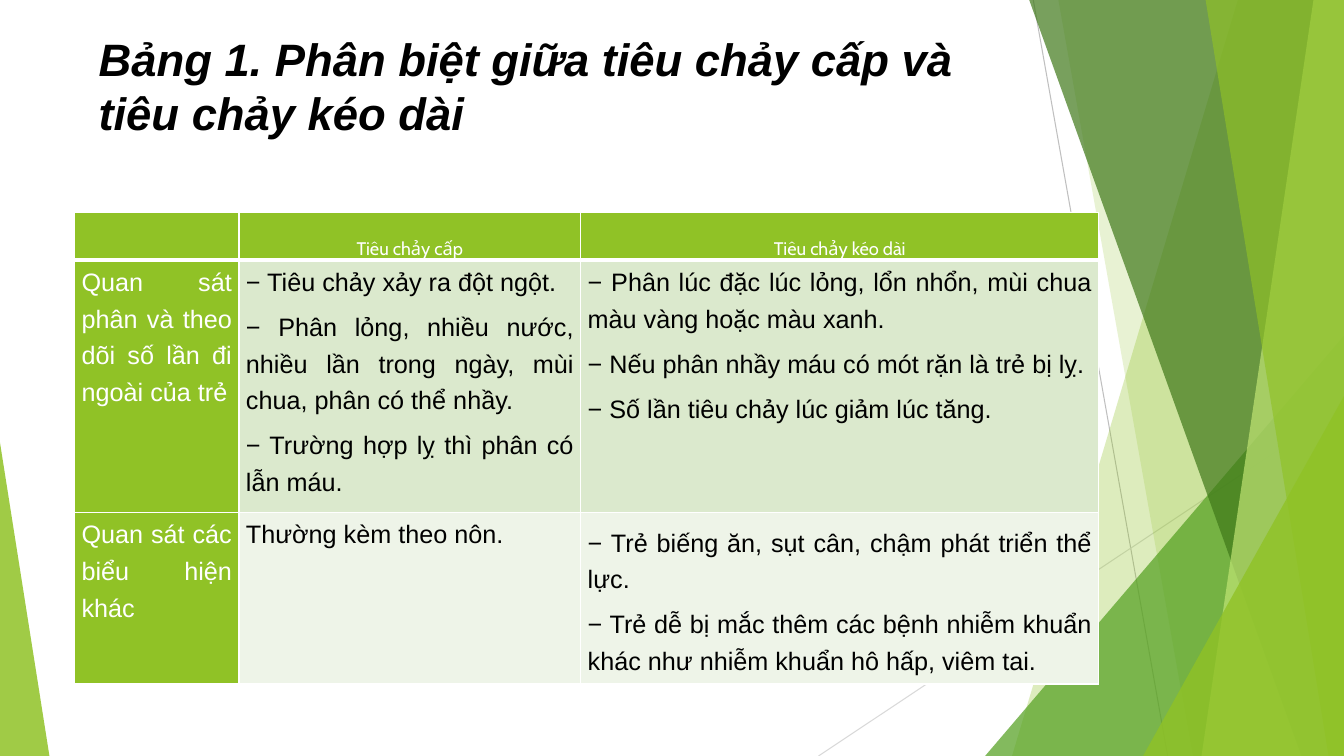
from dataclasses import dataclass

from lxml.etree import SubElement
from pptx import Presentation
from pptx.dml.color import RGBColor
from pptx.enum.shapes import MSO_CONNECTOR as Connector, MSO_SHAPE as Preset
from pptx.enum.text import MSO_ANCHOR as Anchor, PP_ALIGN as Align
from pptx.oxml.ns import qn
from pptx.util import Emu, Inches, Pt


@dataclass(frozen=True)
class Theme:
    green: str = "90C226"
    leaf: str = "54A021"
    forest: str = "3F7819"
    lime: str = "C0E474"
    band_dark: str = "DBE9CD"
    band_light: str = "EEF4E8"
    white: str = "FFFFFF"
    black: str = "000000"
    body_font: str = "Arial"
    header_font: str = "Cabin"
    title_size: float = 32.4
    header_size: float = 13
    body_size: float = 18


# All positions are in percent of the slide's width (x) and height (y).
@dataclass(frozen=True)
class Ray:
    start: tuple[float, float]
    end: tuple[float, float]
    color: str


@dataclass(frozen=True)
class Facet:
    """Panel with a slanted left edge, reaching the slide's right side."""
    top: float
    bottom: float
    color: str
    opacity: int


@dataclass(frozen=True)
class Corner:
    """Right triangle standing on the slide's bottom edge."""
    left: float
    top: float
    width: float
    apex: float
    color: str
    opacity: int


@dataclass(frozen=True)
class CellStyle:
    fill: str
    color: str
    font: str
    size: float
    align: Align
    anchor: Anchor = Anchor.TOP


THEME = Theme()
HEADER = CellStyle(THEME.green, THEME.white, THEME.header_font,
                   THEME.header_size, Align.CENTER, Anchor.BOTTOM)
LABEL = CellStyle(THEME.green, THEME.white, THEME.body_font,
                  THEME.body_size, Align.JUSTIFY)
DARK = CellStyle(THEME.band_dark, THEME.black, THEME.body_font,
                 THEME.body_size, Align.JUSTIFY)
LIGHT = CellStyle(THEME.band_light, THEME.black, THEME.body_font,
                  THEME.body_size, Align.JUSTIFY)
LIGHT_MIDDLE = CellStyle(THEME.band_light, THEME.black, THEME.body_font,
                         THEME.body_size, Align.JUSTIFY, Anchor.MIDDLE)

RAYS = [
    Ray((76.88, 0), (86.88, 100), "BFBFBF"),
    Ray((100, 53.73), (60.9, 100), "D9D9D9"),
]
DECORATIONS = [
    Facet(92.1, 75.3, THEME.green, 30),
    Facet(78.75, 88.75, THEME.green, 20),
    Corner(73.3, 44.4, 26.7, 1, THEME.leaf, 72),
    Facet(76.58, 96.83, THEME.forest, 70),
    Facet(97.73, 89.4, THEME.lime, 70),
    Facet(89.7, 98.85, THEME.green, 65),
    Corner(85.05, 52.4, 14.95, 1, THEME.green, 80),
    Corner(0, 58.53, 3.68, 0, THEME.green, 85),
]

TITLE = "Bảng 1. Phân biệt giữa tiêu chảy cấp và tiêu chảy kéo dài"
COLUMNS = [12.23, 25.43, 38.55]
ROWS = [6.27, 32.67, 22.67]
CELLS = [
    [(HEADER, []), (HEADER, ["Tiêu chảy cấp"]), (HEADER, ["Tiêu chảy kéo dài"])],
    [(LABEL, ["Quan sát phân và theo dõi số lần đi ngoài của trẻ"]),
     (DARK, ["− Tiêu chảy xảy ra đột ngột.",
             "− Phân lỏng, nhiều nước, nhiều lần trong ngày, mùi chua, phân có thể nhầy.",
             "− Trường hợp lỵ thì phân có lẫn máu."]),
     (DARK, ["− Phân lúc đặc lúc lỏng, lổn nhổn, mùi chua màu vàng hoặc màu xanh.",
             "− Nếu phân nhầy máu có mót rặn là trẻ bị lỵ.",
             "− Số lần tiêu chảy lúc giảm lúc tăng."])],
    [(LABEL, ["Quan sát các biểu hiện khác"]),
     (LIGHT, ["Thường kèm theo nôn."]),
     (LIGHT_MIDDLE, ["− Trẻ biếng ăn, sụt cân, chậm phát triển thể lực.",
                     "− Trẻ dễ bị mắc thêm các bệnh nhiễm khuẩn khác như nhiễm khuẩn hô hấp, viêm tai."])],
]

presentation = Presentation()
presentation.slide_width = Inches(13.33)
presentation.slide_height = Inches(7.5)


def x(percent: float) -> Emu:
    return Emu(round(presentation.slide_width * percent / 100))


def y(percent: float) -> Emu:
    return Emu(round(presentation.slide_height * percent / 100))


def rgb(color: str) -> RGBColor:
    return RGBColor.from_string(color)


def draw_ray(slide, ray: Ray) -> None:
    line = slide.shapes.add_connector(
        Connector.STRAIGHT, x(ray.start[0]), y(ray.start[1]), x(ray.end[0]), y(ray.end[1]))
    line.line.color.rgb = rgb(ray.color)
    line.line.width = Pt(0.75)
    SubElement(line._element.spPr, qn("a:effectLst"))


def draw_decoration(slide, item: Facet | Corner) -> None:
    if isinstance(item, Facet):
        builder = slide.shapes.build_freeform(x(item.top), y(0))
        builder.add_line_segments(
            [(x(100), y(0)), (x(100), y(100)), (x(item.bottom), y(100))], close=True)
        shape = builder.convert_to_shape()
    else:
        shape = slide.shapes.add_shape(
            Preset.ISOSCELES_TRIANGLE, x(item.left), y(item.top),
            x(item.width), y(100 - item.top))
        shape.adjustments[0] = item.apex
    shape.shadow.inherit = False
    shape.line.fill.background()
    shape.fill.solid()
    shape.fill.fore_color.rgb = rgb(item.color)
    for color in shape._element.spPr.iter(qn("a:srgbClr")):
        SubElement(color, qn("a:alpha"), val=str(item.opacity * 1000))


def draw_title(slide) -> None:
    frame = slide.shapes.add_textbox(x(6.6), y(3.47), x(70.5), y(19.2)).text_frame
    frame.word_wrap = True
    paragraph = frame.paragraphs[0]
    paragraph.text = TITLE
    font = paragraph.font
    font.name, font.size = THEME.body_font, Pt(THEME.title_size)
    font.bold = font.italic = True
    font.color.rgb = rgb(THEME.black)


def add_border(cell, side: str, points: float) -> None:
    line = SubElement(cell._tc.get_or_add_tcPr(), qn(f"a:ln{side}"), w=str(Pt(points)))
    SubElement(SubElement(line, qn("a:solidFill")), qn("a:srgbClr"), val=THEME.white)


def fill_cell(cell, style: CellStyle, lines: list[str], row: int) -> None:
    # Borders: a thicker rule separates the header from the body
    for side in "LRTB":
        under_header = (row, side) in ((0, "B"), (1, "T"))
        add_border(cell, side, 3 if under_header else 1)
    cell.fill.solid()
    cell.fill.fore_color.rgb = rgb(style.fill)
    cell.margin_left = cell.margin_right = Inches(0.07)
    cell.margin_top = cell.margin_bottom = 0
    cell.vertical_anchor = style.anchor
    cell.text_frame.text = "\n".join(lines)
    for paragraph in cell.text_frame.paragraphs:
        paragraph.alignment = style.align
        paragraph.line_spacing = 1.3
        paragraph.space_before = Pt(6)
        font = paragraph.font
        font.name, font.size, font.bold = style.font, Pt(style.size), False
        font.color.rgb = rgb(style.color)


def draw_table(slide) -> None:
    table = slide.shapes.add_table(
        len(ROWS), len(COLUMNS), x(5.55), y(28.13), x(sum(COLUMNS)), y(sum(ROWS))).table
    table.first_row = table.horz_banding = False
    for column, width in zip(table.columns, COLUMNS):
        column.width = x(width)
    for index, (row, height) in enumerate(zip(table.rows, ROWS)):
        row.height = y(height)
        for cell, (style, lines) in zip(row.cells, CELLS[index]):
            fill_cell(cell, style, lines, index)


def main() -> None:
    slide = presentation.slides.add_slide(presentation.slide_layouts[6])
    for ray in RAYS:
        draw_ray(slide, ray)
    for item in DECORATIONS:
        draw_decoration(slide, item)
    draw_title(slide)
    draw_table(slide)
    presentation.save("out.pptx")


if __name__ == "__main__":
    main()
